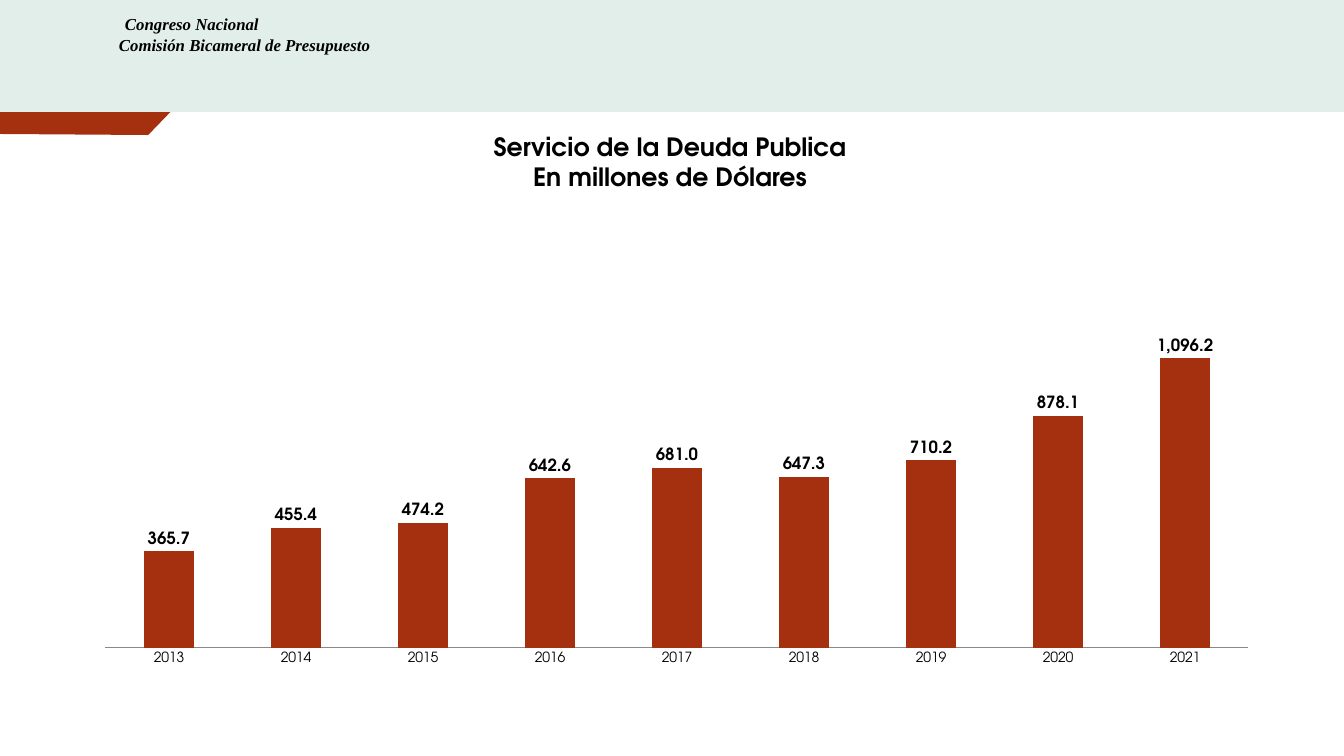
from lxml import etree
from pptx import Presentation
from pptx.chart.data import CategoryChartData
from pptx.dml.color import RGBColor
from pptx.enum.chart import XL_CHART_TYPE, XL_LABEL_POSITION, XL_TICK_MARK
from pptx.enum.shapes import MSO_SHAPE
from pptx.enum.text import MSO_ANCHOR, MSO_AUTO_SIZE, PP_ALIGN
from pptx.oxml.ns import qn
from pptx.util import Inches, Pt

COLUMN = XL_CHART_TYPE.COLUMN_CLUSTERED
OUTSIDE_END = XL_LABEL_POSITION.OUTSIDE_END
NO_TICK = XL_TICK_MARK.NONE
RECTANGLE = MSO_SHAPE.RECTANGLE
TOP = MSO_ANCHOR.TOP
NO_AUTOSIZE = MSO_AUTO_SIZE.NONE
LEFT = PP_ALIGN.LEFT
CENTER = PP_ALIGN.CENTER

COLORS = {"accent": "A53010", "band": "E1EEE9", "text": "000000", "axis": "898989"}
MAIN_FONT = "TeX Gyre Adventor"
HEADER_FONT = "Times New Roman"
DEBT_SERVICE = {
    "2013": 365.7, "2014": 455.4, "2015": 474.2,
    "2016": 642.6, "2017": 681.0, "2018": 647.3,
    "2019": 710.2, "2020": 878.1, "2021": 1096.2,
}


class DebtSlide:
    def __init__(self, presentation):
        self.slide = presentation.slides.add_slide(presentation.slide_layouts[5])

    def color(self, name):
        return RGBColor.from_string(COLORS[name])

    def paint(self, shape, color):
        shape.shadow.inherit = False
        shape.fill.solid()
        shape.fill.fore_color.rgb = self.color(color)
        shape.line.fill.background()

    def style(self, font, size, name=MAIN_FONT, bold=False, italic=False):
        font.name = name
        font.size = Pt(size)
        font.bold = bold
        font.italic = italic
        font.color.rgb = self.color("text")

    def add_lines(self, frame, lines, align, **font_style):
        frame.word_wrap = True
        frame.auto_size = NO_AUTOSIZE
        frame.vertical_anchor = TOP
        for index, line in enumerate(lines):
            paragraph = frame.add_paragraph() if index else frame.paragraphs[0]
            paragraph.alignment = align
            run = paragraph.add_run()
            run.text = line
            self.style(run.font, **font_style)

    def ribbon(self, points):
        builder = self.slide.shapes.build_freeform(
            Inches(points[0][0]), Inches(points[0][1]), scale=1.0)
        builder.add_line_segments([(Inches(x), Inches(y)) for x, y in points[1:]])
        self.paint(builder.convert_to_shape(), "accent")

    def header(self, lines, width, height):
        band = self.slide.shapes.add_shape(RECTANGLE, 0, 0, Inches(width), Inches(height))
        self.paint(band, "band")
        frame = band.text_frame
        frame.margin_left = Inches(1.18)
        frame.margin_top = Inches(0.13)
        self.add_lines(frame, lines, LEFT, size=12, name=HEADER_FONT, bold=True, italic=True)
        for paragraph in frame.paragraphs:
            paragraph.line_spacing = Pt(15)
        first_properties = frame.paragraphs[0]._p.get_or_add_pPr()
        first_properties.set("indent", str(Inches(0.06)))

    def title(self, lines, left, top, width, height):
        title = self.slide.shapes.title
        title.left, title.top = Inches(left), Inches(top)
        title.width, title.height = Inches(width), Inches(height)
        self.add_lines(title.text_frame, lines, CENTER, size=18, bold=True)

    def column_chart(self, values, left, top, width, height, plot_area):
        data = CategoryChartData(number_format="#,##0.0")
        data.categories = list(values)
        data.add_series("Servicio de la Deuda", list(values.values()))
        chart = self.slide.shapes.add_chart(
            COLUMN, Inches(left), Inches(top), Inches(width), Inches(height), data).chart
        chart.has_legend = False
        chart.has_title = False
        self.style(chart.font, 10)

        value_axis = chart.value_axis
        value_axis.visible = False
        value_axis.has_major_gridlines = False
        value_axis.minimum_scale = 0
        value_axis.maximum_scale = 1200
        category_axis = chart.category_axis
        category_axis.major_tick_mark = NO_TICK
        category_axis.minor_tick_mark = NO_TICK
        category_axis.format.line.color.rgb = self.color("axis")
        category_axis.format.line.width = Pt(0.75)

        plot = chart.plots[0]
        plot.gap_width = 150
        plot.vary_by_categories = False
        fill = plot.series[0].format.fill
        fill.solid()
        fill.fore_color.rgb = self.color("accent")
        plot.has_data_labels = True
        labels = plot.data_labels
        labels.show_value = True
        labels.number_format = "#,##0.0"
        labels.number_format_is_linked = False
        labels.position = OUTSIDE_END
        self.style(labels.font, 12, bold=True)
        self.place_plot(chart, plot_area)

    def place_plot(self, chart, plot_area):
        plot_element = chart._chartSpace.chart.plotArea
        for old_layout in plot_element.findall(qn("c:layout")):
            plot_element.remove(old_layout)
        layout = etree.Element(qn("c:layout"))
        plot_element.insert(0, layout)
        manual = etree.SubElement(layout, qn("c:manualLayout"))
        settings = [("layoutTarget", "inner"), ("xMode", "edge"), ("yMode", "edge")]
        settings += zip("xywh", plot_area)
        for tag, value in settings:
            etree.SubElement(manual, qn(f"c:{tag}")).set("val", str(value))


def main():
    presentation = Presentation()
    presentation.slide_width = Inches(13.33)
    presentation.slide_height = Inches(7.5)
    page = DebtSlide(presentation)
    page.ribbon([(0, 0.78), (1.46, 0.78), (1.74, 1.06), (1.47, 1.34), (0, 1.33)])
    page.header(["Congreso Nacional", "Comisión Bicameral de Presupuesto"], 13.33, 1.11)
    page.title(["Servicio de la Deuda Publica", "En millones de Dólares"], 2.25, 1.25, 8.79, 0.71)
    page.column_chart(DEBT_SERVICE, 0.81, 1.66, 11.81, 5.24, (0.02, 0.31, 0.96, 0.6))
    presentation.save("out.pptx")


if __name__ == "__main__":
    main()
